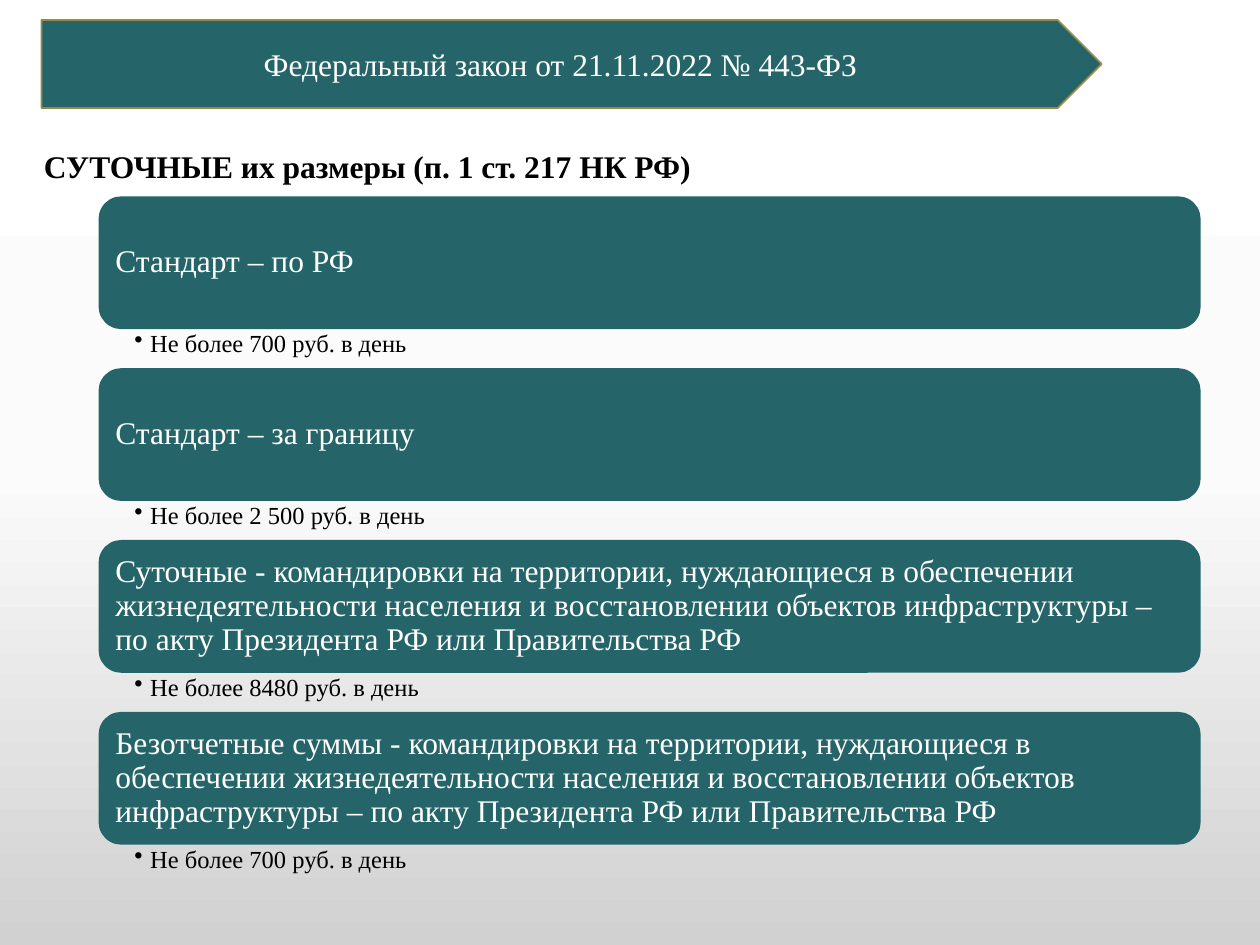
import copy
from dataclasses import dataclass

import pptx
import pptx.dml.color
import pptx.enum.shapes
import pptx.enum.text
import pptx.oxml
import pptx.oxml.ns
import pptx.shapes.autoshape
import pptx.slide
import pptx.text.text
import pptx.util

Pt = pptx.util.Pt
RGBColor = pptx.dml.color.RGBColor
Shape = pptx.enum.shapes.MSO_SHAPE
Anchor = pptx.enum.text.MSO_ANCHOR
Align = pptx.enum.text.PP_ALIGN

TEAL = RGBColor(0x25, 0x65, 0x69)
GOLD = RGBColor(0x98, 0x89, 0x4B)
WHITE = RGBColor(0xFF, 0xFF, 0xFF)
BLACK = RGBColor(0x00, 0x00, 0x00)
BACKGROUND_STOPS = (
    (0, WHITE),
    (0.5, RGBColor(0xFB, 0xFB, 0xFB)),
    (1, RGBColor(0xD1, 0xD1, 0xD1)),
)
FONT = "Times New Roman"


@dataclass(frozen=True)
class Box:
    left: float
    top: float
    width: float
    height: float

    def lengths(self) -> list[pptx.util.Length]:
        return [Pt(v) for v in (self.left, self.top, self.width, self.height)]


@dataclass(frozen=True)
class Allowance:
    case: str
    limit: str


ALLOWANCES = (
    Allowance("Стандарт – по РФ", "Не более 700 руб. в день"),
    Allowance("Стандарт – за границу", "Не более 2 500 руб. в день"),
    Allowance(
        "Суточные - командировки на территории, нуждающиеся в обеспечении "
        "жизнедеятельности населения и восстановлении объектов инфраструктуры – "
        "по акту Президента РФ или Правительства РФ",
        "Не более 8480 руб. в день",
    ),
    Allowance(
        "Безотчетные суммы - командировки на территории, нуждающиеся в "
        "обеспечении жизнедеятельности населения и восстановлении объектов "
        "инфраструктуры – по акту Президента РФ или Правительства РФ",
        "Не более 700 руб. в день",
    ),
)

# Stack of allowances
STACK_LEFT, STACK_TOP, STACK_WIDTH = 56.8, 112.7, 628.8
CARD_HEIGHT, LIMIT_HEIGHT = 74.9, 23.3
PITCH = CARD_HEIGHT + LIMIT_HEIGHT


def write(
    frame: pptx.text.text.TextFrame,
    text: str,
    size: float,
    color: RGBColor,
    bold: bool = False,
    align: Align = Align.LEFT,
    anchor: Anchor = Anchor.MIDDLE,
    spacing: float = 0.9,
) -> None:
    frame.text = text
    frame.word_wrap = True
    frame.vertical_anchor = anchor
    paragraph = frame.paragraphs[0]
    paragraph.alignment = align
    paragraph.line_spacing = spacing
    font = paragraph.runs[0].font
    font.name, font.size, font.bold = FONT, Pt(size), bold
    font.color.rgb = color


def set_insets(
    frame: pptx.text.text.TextFrame, left: float, top: float, right: float, bottom: float
) -> None:
    frame.margin_left, frame.margin_top = Pt(left), Pt(top)
    frame.margin_right, frame.margin_bottom = Pt(right), Pt(bottom)


def add_bullet(paragraph: pptx.text.text._Paragraph, indent: float) -> None:
    properties = paragraph._p.get_or_add_pPr()
    properties.set("marL", str(Pt(indent)))
    properties.set("indent", str(-Pt(indent)))
    bullet = pptx.oxml.parse_xml(
        f'<a:buChar {pptx.oxml.ns.nsdecls("a")} char="•"/>'
    )
    properties.append(bullet)


def add_panel(
    slide: pptx.slide.Slide, kind: Shape, box: Box, outline: RGBColor
) -> pptx.shapes.autoshape.Shape:
    panel = slide.shapes.add_shape(kind, *box.lengths())
    panel.shadow.inherit = False
    panel.fill.solid()
    panel.fill.fore_color.rgb = TEAL
    panel.line.color.rgb = outline
    panel.line.width = Pt(1)
    return panel


def add_allowance(slide: pptx.slide.Slide, allowance: Allowance, top: float) -> None:
    card_box = Box(STACK_LEFT, top, STACK_WIDTH, CARD_HEIGHT)
    card = add_panel(slide, Shape.ROUNDED_RECTANGLE, card_box, TEAL)
    set_insets(card.text_frame, 5.5, 5, 5.5, 5)
    write(card.text_frame, allowance.case, 18, WHITE)

    limit_box = Box(STACK_LEFT, top + CARD_HEIGHT, STACK_WIDTH, LIMIT_HEIGHT)
    limit = slide.shapes.add_textbox(*limit_box.lengths()).text_frame
    set_insets(limit, 20, 1.8, 10, 1.8)
    write(limit, allowance.limit, 14, BLACK, anchor=Anchor.TOP)
    add_bullet(limit.paragraphs[0], 9)


def paint_background(slide: pptx.slide.Slide) -> None:
    fill = slide.background.fill
    fill.gradient()
    fill.gradient_angle = 270
    stop_list = slide.element.find(".//" + pptx.oxml.ns.qn("a:gsLst"))
    stop_list.append(copy.deepcopy(stop_list[0]))
    for stop, (position, color) in zip(fill.gradient_stops, BACKGROUND_STOPS):
        stop.position = position
        stop.color.rgb = color


def main() -> None:
    presentation = pptx.Presentation()
    presentation.slide_width, presentation.slide_height = Pt(720), Pt(540)
    slide = presentation.slides.add_slide(presentation.slide_layouts[6])
    paint_background(slide)

    # Heading
    heading = slide.shapes.add_textbox(*Box(18, 68.4, 689, 55.4).lengths())
    write(
        heading.text_frame, "СУТОЧНЫЕ их размеры (п. 1 ст. 217 НК РФ)", 18, BLACK, bold=True
    )

    # Banner with the law
    law = add_panel(slide, Shape.PENTAGON, Box(23.7, 11.4, 605.8, 50.4), GOLD)
    write(
        law.text_frame,
        "Федеральный закон от 21.11.2022 № 443-ФЗ",
        18,
        WHITE,
        align=Align.CENTER,
        spacing=1.0,
    )

    # Allowances with their limits
    for index, allowance in enumerate(ALLOWANCES):
        add_allowance(slide, allowance, STACK_TOP + index * PITCH)

    presentation.save("out.pptx")


if __name__ == "__main__":
    main()
